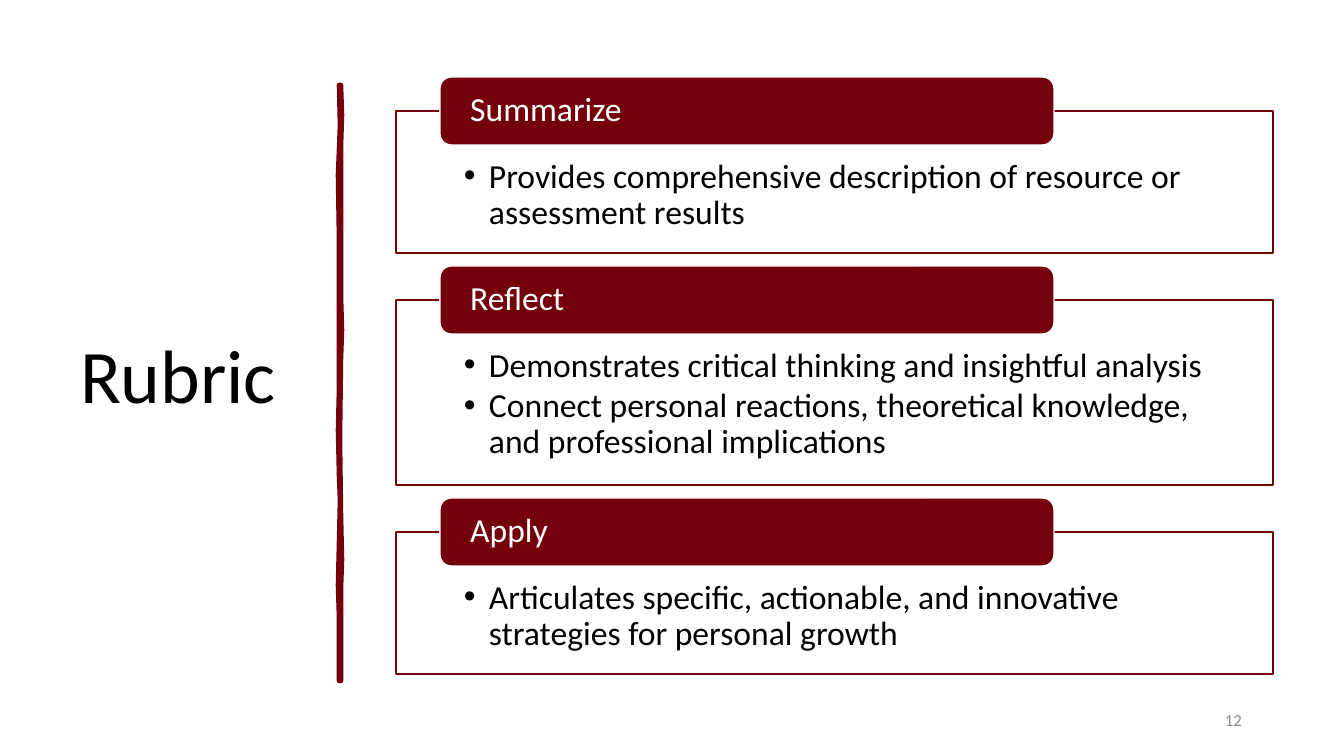
from lxml import etree
from pptx import Presentation, util as u
from pptx.dml.color import RGBColor
from pptx.enum import shapes, text
from pptx.oxml.ns import qn

PX = 914400 / 100.8
HUES = {"wine": "73000A", "white": "FFFFFF", "black": "000000", "gray": "8C8C8C"}
TOP, MID = text.MSO_ANCHOR.TOP, text.MSO_ANCHOR.MIDDLE
LEFT, RIGHT = text.PP_ALIGN.LEFT, text.PP_ALIGN.RIGHT


def paint(shape, fill, line, width=1):
    shape.fill.solid()
    shape.fill.fore_color.rgb = RGBColor.from_string(HUES[fill])
    shape.line.color.rgb = RGBColor.from_string(HUES[line])
    shape.line.width = u.Pt(width)


def write(shape, lines, size, hue, pads, anchor=MID, align=LEFT, after=0, bullet=False):
    """Fill the shape with paragraphs; pads are left, top, right, bottom in px."""
    frame = shape.text_frame
    frame.text = "\n".join(lines)
    sides = ("margin_left", "margin_top", "margin_right", "margin_bottom")
    form = {"word_wrap": True, "auto_size": text.MSO_AUTO_SIZE.NONE, "vertical_anchor": anchor}
    form.update({side: round(pad * PX) for side, pad in zip(sides, pads)})
    for name, value in form.items():
        setattr(frame, name, value)
    for para in frame.paragraphs:
        if bullet:
            props = para._p.get_or_add_pPr()
            props.set("marL", str(round(25 * PX)))
            props.set("indent", str(round(-25 * PX)))
            etree.SubElement(props, qn("a:buChar")).set("char", "•")
        look = {"alignment": align, "line_spacing": 0.9,
                "space_before": u.Pt(0), "space_after": u.Pt(after)}
        for name, value in look.items():
            setattr(para, name, value)
        font = para.runs[0].font
        for name, value in {"name": "Calibri", "size": u.Pt(size), "bold": False}.items():
            setattr(font, name, value)
        font.color.rgb = RGBColor.from_string(HUES[hue])


deck = Presentation()
deck.slide_width, deck.slide_height = round(1344 * PX), round(756 * PX)
slide = deck.slides.add_slide(deck.slide_layouts.get_by_name("Comparison"))
title, *lists, spare = slide.placeholders
spare.element.getparent().remove(spare.element)

# Title
title.left, title.top, title.width, title.height = [round(n * PX) for n in (70, 71, 377, 616)]
write(title, ["Rubric"], 54, "black", (10, 5, 10, 5))

# Hand-drawn divider: down the right edge, back up the left
right = [(341, 85), (342, 115), (341, 147), (341, 296), (342, 330), (341, 359),
         (340, 439), (341, 514), (342, 560), (341, 589), (341, 681)]
left = [(339, 681), (339, 618), (338, 585), (339, 543), (340, 500), (339, 475),
        (338, 430), (339, 389), (339, 302), (339, 240), (338, 175), (340, 125), (339, 85)]
edge = right + left
pen = slide.shapes.build_freeform(*edge[0], scale=PX)
pen.add_line_segments(edge[1:], close=True)
rule = pen.convert_to_shape()
rule.shadow.inherit = False
paint(rule, "wine", "wine", 3.25)

# Framed lists with heading bands
parts = [
    ("Summarize", 142, ["Provides comprehensive description of resource or assessment results"]),
    ("Reflect", 185, ["Demonstrates critical thinking and insightful analysis",
                      "Connect personal reactions, theoretical knowledge, and professional implications"]),
    ("Apply", 142, ["Articulates specific, actionable, and innovative strategies for personal growth"]),
]
top = 111
for box, (head, high, points) in zip(lists, parts):
    box.left, box.top, box.width, box.height = [round(n * PX) for n in (396, top, 877, high)]
    paint(box, "white", "wine")
    write(box, points, 24, "black", (68, 48, 68, 19), TOP, after=3, bullet=True)
    spot = [round(n * PX) for n in (440, top - 34, 614, 68)]
    band = slide.shapes.add_shape(shapes.MSO_SHAPE.ROUNDED_RECTANGLE, *spot)
    band.shadow.inherit = False
    paint(band, "wine", "white")
    write(band, [head], 24, "white", (27, 0, 27, 0))
    top += high + 47

# Page number
page = slide.shapes.add_textbox(*[round(n * PX) for n in (950, 701, 302, 40)])
write(page, ["12"], 12, "gray", (10, 5, 10, 5), align=RIGHT)

deck.save("out.pptx")
